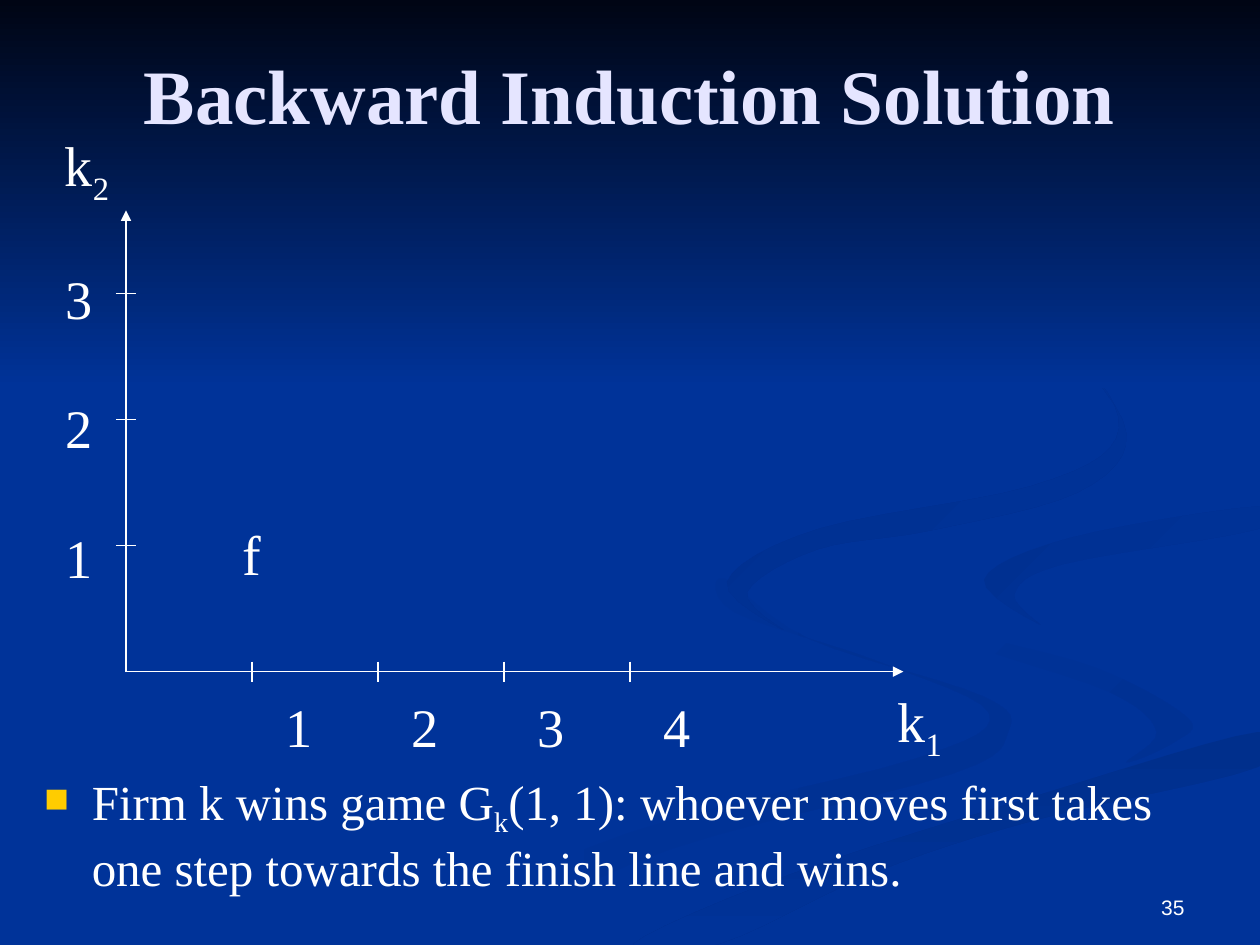
from pptx import Presentation
from pptx.dml.color import RGBColor
from pptx.enum.shapes import MSO_CONNECTOR, MSO_SHAPE
from pptx.enum.text import MSO_ANCHOR, PP_ALIGN
from pptx.oxml import parse_xml
from pptx.oxml.ns import nsdecls, qn
from pptx.util import Inches, Pt

LINE, RECT = MSO_CONNECTOR.STRAIGHT, MSO_SHAPE.RECTANGLE
TOP, MIDDLE, BOTTOM = MSO_ANCHOR.TOP, MSO_ANCHOR.MIDDLE, MSO_ANCHOR.BOTTOM
LEFT, CENTER, RIGHT = PP_ALIGN.LEFT, PP_ALIGN.CENTER, PP_ALIGN.RIGHT

COLORS = {"blue": "003399", "night": "000514", "white": "FFFFFF",
          "title": "E5E5FF", "gold": "FFCC00", "shade": "003193",
          "deep": "002F8C", "dusk": "003091", "dark": "002F8E"}

# Ribbons: start colour, end colour, angle, knots of the outline in inches
RIBBONS = [
    ("blue", "shade", 0, [
        (7.81, 5.53), (6.42, 5.07), (5.75, 4.59), (5.83, 4.86), (6.97, 5.25),
        (7.85, 5.66), (7.27, 6.02), (4.99, 6.61), (3, 7.49), (3.61, 7.49),
        (5.32, 6.74), (7.56, 6.14), (8, 5.81)]),
    ("blue", "shade", 45, [
        (9.43, 5.7), (8.7, 5.3), (7.58, 4.98), (7.24, 4.64), (7.55, 5.05),
        (8.8, 5.49), (9.18, 5.81), (8.94, 6.05), (9.32, 5.89)]),
    ("deep", "blue", 90, [
        (5.03, 7.49), (5.71, 7.49), (6.95, 6.92), (8.21, 6.51),
        (9.98, 6.09), (9.98, 5.81), (8.31, 6.29), (6.3, 6.93)]),
    ("dusk", "blue", 45, [
        (7.81, 4.6), (8.26, 4.96), (8.05, 4.72), (8.43, 4.48),
        (9.98, 4.2), (9.98, 4.02), (8.49, 4.27)]),
    ("dark", "blue", 45, [
        (7.39, 4.21), (8.55, 3.91), (8.94, 3.44), (8.43, 2.75), (7.62, 2.33),
        (8.62, 2.92), (8.86, 3.48), (8.18, 3.86), (6.49, 4.2), (5.77, 4.62),
        (6.22, 5), (5.93, 4.7), (6.49, 4.36)]),
]


def color(name):
    return RGBColor.from_string(COLORS[name])


def blend(a, b, c, d, t):
    """Catmull-Rom value between b and c."""
    return b + t / 2 * (c - a + t * (2 * a - 5 * b + 4 * c - d
                                     + t * (3 * (b - c) + d - a)))


def smooth(knots, steps=6):
    """Closed curve through the knots, in whole EMU."""
    count, curve = len(knots), []
    for i in range(count):
        near = [knots[(i + j) % count] for j in (-1, 0, 1, 2)]
        for step in range(steps):
            curve.append(tuple(Inches(blend(*axis, step / steps))
                               for axis in zip(*near)))
    return curve


class Canvas:
    """Holds the style and the current slide."""

    def __init__(self, slide, font="Times New Roman"):
        self.font = font
        self.shapes = slide.shapes

    def paint(self, shape, first, last, angle):
        fill = shape.fill
        fill.gradient()
        fill.gradient_angle = (360 - angle) % 360
        for stop, name in zip(fill.gradient_stops, (first, last)):
            stop.color.rgb = color(name)
        shape.line.fill.background()
        shape.shadow.inherit = False

    def ribbon(self, first, last, angle, knots):
        curve = smooth(knots)
        pen = self.shapes.build_freeform(*curve[0])
        pen.add_line_segments(curve[1:], close=True)
        self.paint(pen.convert_to_shape(), first, last, angle)

    def band(self, box, first, last, angle):
        shape = self.shapes.add_shape(RECT, *map(Inches, box))
        self.paint(shape, first, last, angle)

    def line(self, start, end, arrow=False):
        link = self.shapes.add_connector(LINE, *map(Inches, start + end))
        link.line.color.rgb = color("white")
        link.line.width = Pt(0.75)
        props = link.element.spPr
        if arrow:
            props.find(qn("a:ln")).append(
                parse_xml(f'<a:tailEnd {nsdecls("a")} type="triangle"/>'))
        props.append(parse_xml(f'<a:effectLst {nsdecls("a")}/>'))

    def text(self, box, parts, size, tint="white", bold=False, font=None,
             align=CENTER, anchor=MIDDLE):
        """Write the parts in turn; every second one is a subscript."""
        frame = self.shapes.add_textbox(*map(Inches, box)).text_frame
        frame.word_wrap = True
        frame.vertical_anchor = anchor
        para = frame.paragraphs[0]
        para.alignment = align
        for i, part in enumerate(parts):
            run = para.add_run()
            run.text = part
            run.font.name = font or self.font
            run.font.size = Pt(size)
            run.font.bold = bold
            run.font.color.rgb = color(tint)
            if i % 2:
                run.font._element.set("baseline", "-25000")
        return para

    def label(self, x, y, *parts, size=32):
        self.text((x - 0.35, y - 0.32, 0.7, 0.64), parts, size)

    def bullet(self, box, parts, size):
        para = self.text(box, parts, size, align=LEFT, anchor=TOP)
        props = para._p.get_or_add_pPr()
        props.set("marL", str(Inches(0.38)))
        props.set("indent", str(Inches(-0.38)))
        space = nsdecls("a")
        for mark in (f'<a:buClr {space}><a:srgbClr val="{COLORS["gold"]}"/></a:buClr>',
                     f'<a:buSzPct {space} val="70000"/>',
                     f'<a:buChar {space} char="■"/>'):
            props.append(parse_xml(mark))


def main():
    deck = Presentation()
    deck.slide_width, deck.slide_height = Inches(10), Inches(7.5)
    slide = deck.slides.add_slide(deck.slide_layouts[6])
    art = Canvas(slide)

    # Background
    slide.background.fill.solid()
    slide.background.fill.fore_color.rgb = color("blue")
    for ribbon in RIBBONS:
        art.ribbon(*ribbon)
    art.band((0, 0, 10, 3.08), "night", "blue", 90)

    # Title
    art.text((0.5, 0.12, 9, 1.25), ["Backward Induction Solution"], 44,
             tint="title", bold=True)

    # Axes and ticks
    left, base, half = 1, 5.33, 0.08
    art.line((left, base), (left, 1.67), arrow=True)
    art.line((left, base), (7.17, base), arrow=True)
    for i in range(1, 5):
        art.line((left + i, base - half), (left + i, base + half))
    for i in range(1, 4):
        art.line((left - half, base - i), (left + half, base - i))

    # Axis labels
    for i in range(1, 5):
        art.label(1.37 + i, 5.76, str(i), size=31)
    for i in range(1, 4):
        art.label(0.63, 5.45 - 1.03 * i, str(i), size=31)
    art.label(7.3, 5.75, "k", "1")
    art.label(0.69, 1.34, "k", "2")
    art.label(2, 4.39, "f")

    # Statement and slide number
    art.bullet((0.25, 6.07, 9.08, 1.22),
               ["Firm k wins game G", "k",
                "(1, 1): whoever moves first takes one step towards "
                "the finish line and wins."], 28)
    art.text((7.17, 6.83, 2.33, 0.52), ["35"], 12, font="Arial",
             align=RIGHT, anchor=BOTTOM)

    deck.save("out.pptx")


if __name__ == "__main__":
    main()
